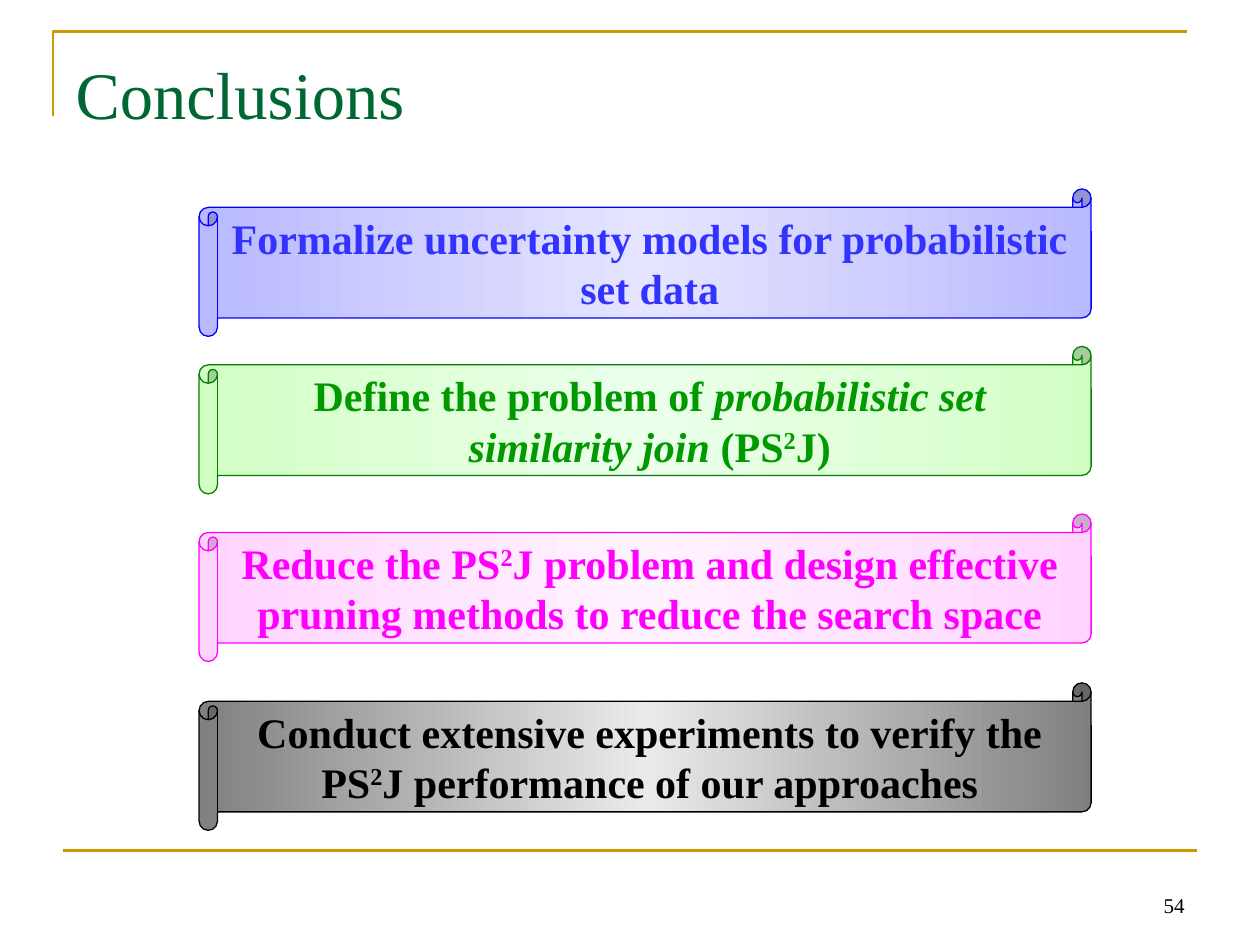
from copy import deepcopy
from dataclasses import dataclass

from lxml import etree
from pptx import Presentation
from pptx.dml.color import RGBColor
from pptx.enum.shapes import MSO_CONNECTOR, MSO_SHAPE
from pptx.enum.text import MSO_ANCHOR, PP_ALIGN
from pptx.oxml.ns import qn
from pptx.util import Inches, Pt

SCROLL = MSO_SHAPE.HORIZONTAL_SCROLL
STRAIGHT = MSO_CONNECTOR.STRAIGHT
TOP, MIDDLE, BOTTOM = MSO_ANCHOR.TOP, MSO_ANCHOR.MIDDLE, MSO_ANCHOR.BOTTOM
LEFT, CENTER, RIGHT = PP_ALIGN.LEFT, PP_ALIGN.CENTER, PP_ALIGN.RIGHT

FONT = "Times New Roman"
COLORS = {"gold": "CC9900", "title": "006633", "black": "000000"}
PLAIN, ITALIC, SUPERSCRIPT = "plain", "italic", "superscript"
SCROLL_LEFT, SCROLL_WIDTH, SCROLL_HEIGHT = 1.58, 7.08, 1.17


@dataclass
class Conclusion:
    top: float
    edge: str
    center: str
    line: str
    text: str
    runs: list[tuple[str, str]]


CONCLUSIONS = [
    Conclusion(1.5, "B9B9FF", "E5E5FF", "0000FF", "3333FF", [
        ("Formalize uncertainty models for probabilistic set data", PLAIN)]),
    Conclusion(2.75, "D3FFC5", "EBFFEB", "008000", "009900", [
        ("Define the problem of ", PLAIN),
        ("probabilistic set similarity join ", ITALIC),
        ("(PS", PLAIN), ("2", SUPERSCRIPT), ("J)", PLAIN)]),
    Conclusion(4.08, "FFD5FF", "FFF3FF", "FF00FF", "FF00FF", [
        ("Reduce the PS", PLAIN), ("2", SUPERSCRIPT),
        ("J problem and design effective pruning methods to reduce the search space", PLAIN)]),
    Conclusion(5.42, "808080", "EAEAEA", "000000", "000000", [
        ("Conduct extensive experiments to verify the PS", PLAIN), ("2", SUPERSCRIPT),
        ("J performance of our approaches", PLAIN)]),
]


def write_text(shape, runs: list[tuple[str, str]], *, size: float, color: str,
               bold: bool = False, align=LEFT, anchor=TOP) -> None:
    frame = shape.text_frame
    frame.word_wrap = True
    frame.vertical_anchor = anchor
    paragraph = frame.paragraphs[0]
    paragraph.alignment = align
    for text, style in runs:
        run = paragraph.add_run()
        run.text = text
        font = run.font
        font.name, font.size, font.bold = FONT, Pt(size), bold
        font.italic = style == ITALIC
        font.color.rgb = RGBColor.from_string(color)
        if style == SUPERSCRIPT:
            font._element.set("baseline", "30000")


def set_line(shape, color: str, width: float) -> None:
    shape.line.color.rgb = RGBColor.from_string(color)
    shape.line.width = Pt(width)


def fill_gradient(shape, edge: str, center: str) -> None:
    """Horizontal gradient with the same color at both edges."""
    fill = shape.fill
    fill.gradient()
    fill.gradient_angle = 0
    for stop in fill.gradient_stops:
        stop.color.rgb = RGBColor.from_string(edge)
    stops = shape._element.spPr.find(qn("a:gradFill")).find(qn("a:gsLst"))
    middle = deepcopy(stops[0])
    middle.set("pos", "50000")
    middle.find(qn("a:srgbClr")).set("val", center)
    stops.insert(1, middle)


def add_conclusion(slide, conclusion: Conclusion) -> None:
    shape = slide.shapes.add_shape(
        SCROLL, Inches(SCROLL_LEFT), Inches(conclusion.top),
        Inches(SCROLL_WIDTH), Inches(SCROLL_HEIGHT))
    shape.shadow.inherit = False
    shape.adjustments[0] = 0.125
    fill_gradient(shape, conclusion.edge, conclusion.center)
    set_line(shape, conclusion.line, 0.75)
    write_text(shape, conclusion.runs, size=24, color=conclusion.text,
               bold=True, align=CENTER, anchor=MIDDLE)


def add_frame(slide) -> None:
    # Corner rule around the title
    builder = slide.shapes.build_freeform(Inches(0.42), Inches(0.92))
    builder.add_line_segments(
        [(Inches(0.42), Inches(0.25)), (Inches(9.42), Inches(0.25))], close=False)
    corner = builder.convert_to_shape()
    corner.shadow.inherit = False
    corner.fill.background()
    set_line(corner, COLORS["gold"], 1.5)

    # Footer rule
    footer = slide.shapes.add_connector(
        STRAIGHT, Inches(0.5), Inches(6.75), Inches(9.5), Inches(6.75))
    set_line(footer, COLORS["gold"], 1.5)
    etree.SubElement(footer._element.spPr, qn("a:effectLst"))


def main() -> None:
    presentation = Presentation()
    presentation.slide_width, presentation.slide_height = Inches(10), Inches(7.5)
    slide = presentation.slides.add_slide(presentation.slide_layouts[5])
    add_frame(slide)

    # Slide number
    number = slide.shapes.add_textbox(
        Inches(7.17), Inches(6.83), Inches(2.33), Inches(0.5))
    write_text(number, [("54", PLAIN)], size=12, color=COLORS["black"],
               align=RIGHT, anchor=BOTTOM)

    # Title
    title = slide.shapes.title
    title.left, title.top = Inches(0.5), Inches(0.3)
    title.width, title.height = Inches(9), Inches(1.25)
    title.text_frame.margin_top = Inches(0.12)
    write_text(title, [("Conclusions", PLAIN)], size=38, color=COLORS["title"])

    # Conclusions
    for conclusion in CONCLUSIONS:
        add_conclusion(slide, conclusion)

    presentation.save("out.pptx")


if __name__ == "__main__":
    main()
